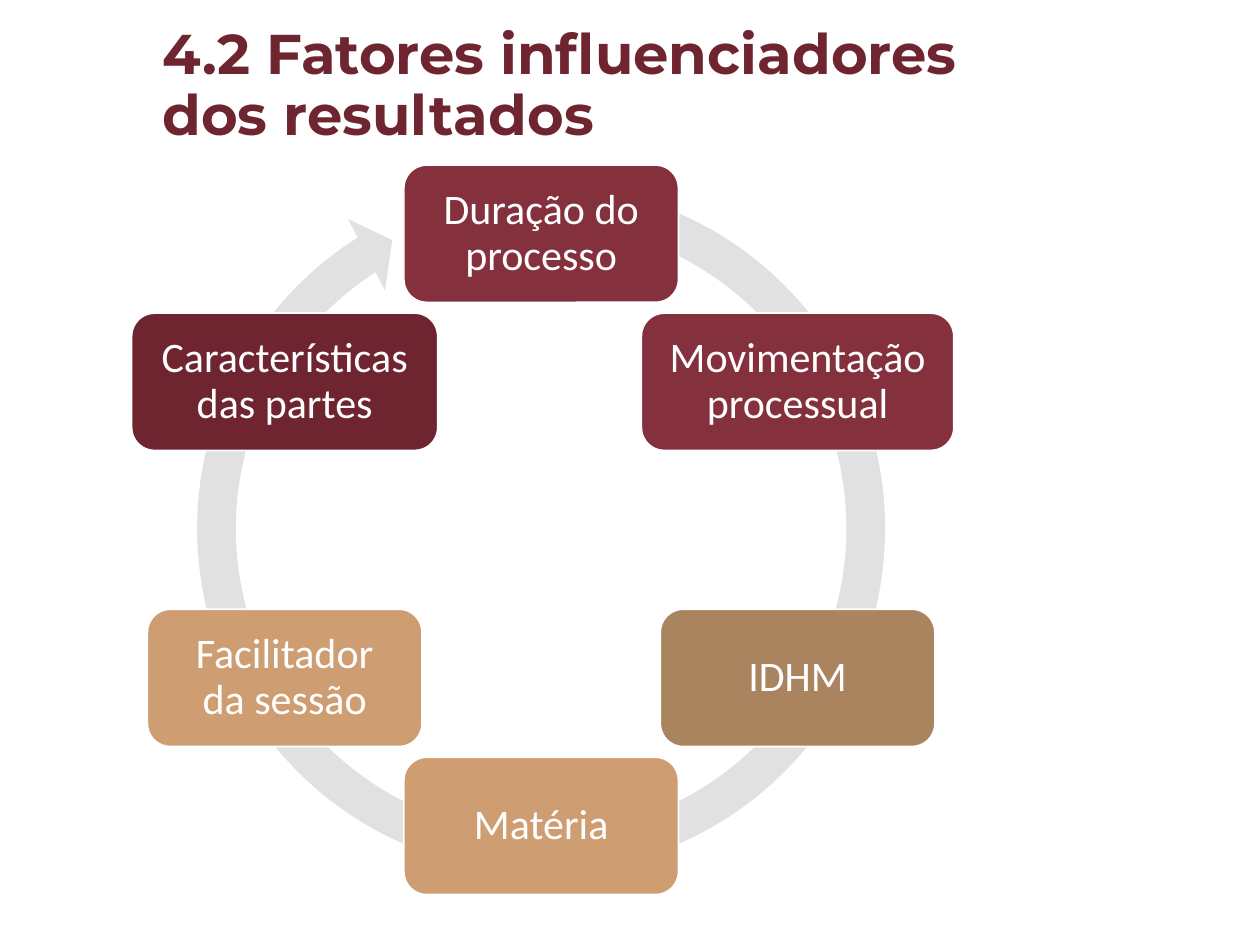
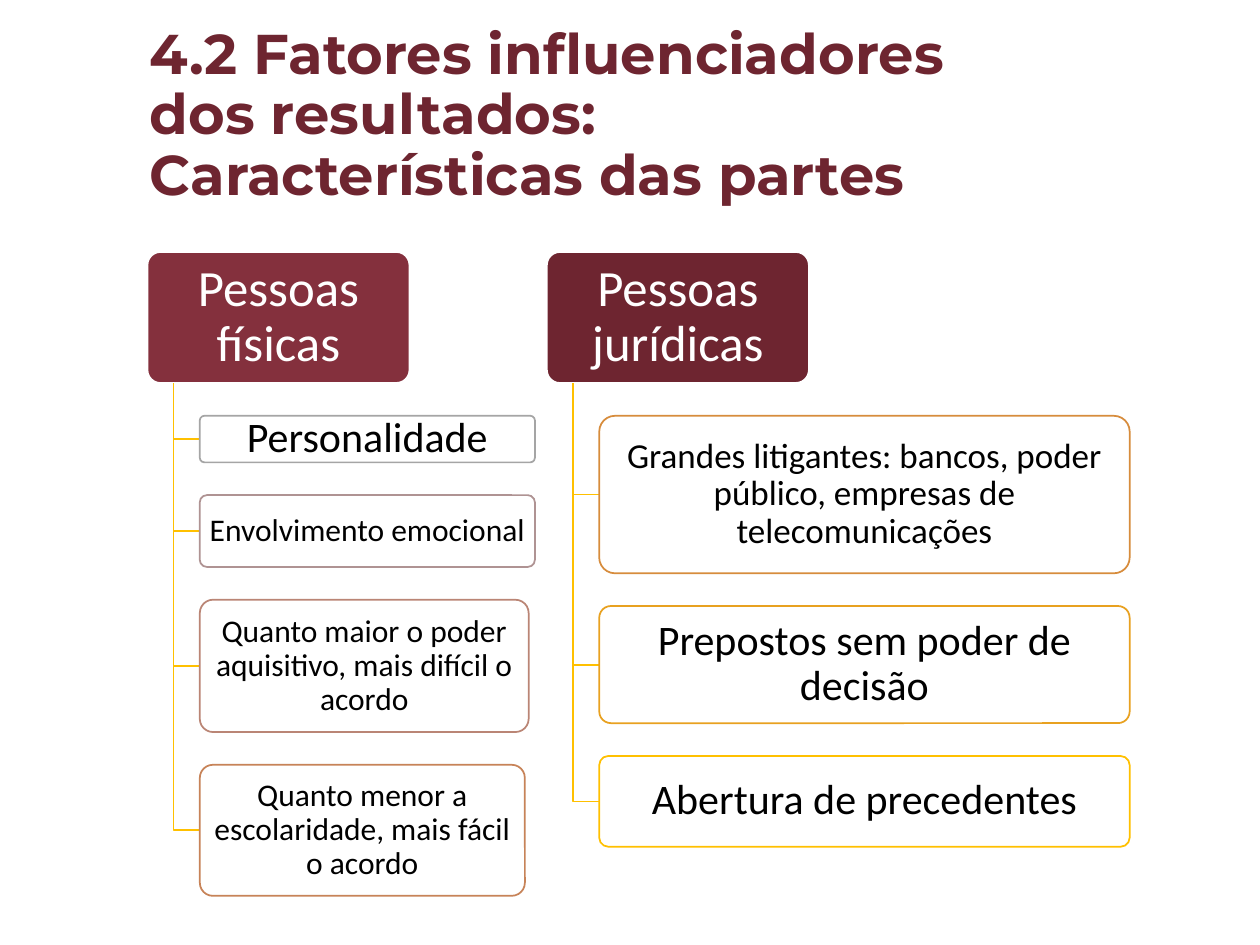
"""Build two slides on the factors that influence settlement results."""
import math

from pptx import Presentation
from pptx.dml.color import RGBColor
from pptx.enum import shapes, text
from pptx.util import Inches, Pt

WINE, DARK_WINE, BROWN, TAN = "84303D", "6E2530", "AA845F", "CE9D72"
WHITE, BLACK, RING_GREY, GOLD = "FFFFFF", "000000", "E1E1E1", "FFC000"

FACTORS = [
    ("Duração do processo", WINE, 2.18),
    ("Movimentação processual", WINE, 2.48),
    ("IDHM", BROWN, 2.18),
    ("Matéria", TAN, 2.18),
    ("Facilitador da sessão", TAN, 2.18),
    ("Características das partes", DARK_WINE, 2.43),
]
INDIVIDUALS = [
    ("Personalidade", 2.66, 0.37, 24, "A5A5A5"),
    ("Envolvimento emocional", 2.66, 0.57, 18, "AF9393"),
    ("Quanto maior o poder aquisitivo, mais difícil o acordo", 2.61, 1.05, 18, "BA8575"),
    ("Quanto menor a escolaridade, mais fácil o acordo", 2.58, 1.04, 18, "C78358"),
]
COMPANIES = [
    ("Grandes litigantes: bancos, poder público, empresas de telecomunicações",
     4.21, 1.25, 20, "D78C3C"),
    ("Prepostos sem poder de decisão", 4.21, 0.93, 24, "E8A120"),
    ("Abertura de precedentes", 4.21, 0.72, 24, "FFC000"),
]


def color(value):
    """Turn a hex string into a colour."""
    return RGBColor.from_string(value)


def write(frame, content, size, ink, font="Calibri", bold=False, align=None):
    """Write content into a text frame in one style."""
    frame.word_wrap = True
    frame.vertical_anchor = text.MSO_ANCHOR.MIDDLE
    frame.text = content
    for paragraph in frame.paragraphs:
        paragraph.line_spacing = 0.9
        paragraph.alignment = align
        for run in paragraph.runs:
            run.font.name, run.font.size, run.font.bold = font, Pt(size), bold
            run.font.color.rgb = color(ink)


def add_title(slide, content, left, top, height):
    """Add the slide title."""
    title = slide.shapes.add_textbox(Inches(left), Inches(top), Inches(8.62), Inches(height))
    write(title.text_frame, content, 32, DARK_WINE, "Montserrat", True, text.PP_ALIGN.LEFT)


def add_card(slide, content, box, fill, outline, size, ink, corner, inset):
    """Add a rounded card with centred text."""
    card = slide.shapes.add_shape(
        shapes.MSO_SHAPE.ROUNDED_RECTANGLE, *(Inches(length) for length in box))
    card.shadow.inherit = False
    card.adjustments[0] = corner
    card.fill.solid()
    card.fill.fore_color.rgb = color(fill)
    card.line.color.rgb = color(outline)
    card.line.width = Pt(1)
    frame = card.text_frame
    frame.margin_left = frame.margin_right = Inches(inset)
    frame.margin_top = frame.margin_bottom = Inches(0.04)
    write(frame, content, size, ink, align=text.PP_ALIGN.CENTER)


def add_cycle(slide, left, top, size):
    """Draw the factors around a circular arrow that fills a square box."""
    ring = slide.shapes.add_shape(
        shapes.MSO_SHAPE.CIRCULAR_ARROW, Inches(left), Inches(top), Inches(size), Inches(size))
    ring.shadow.inherit = False
    for index, value in enumerate((0.053, 3.126, 142.484, 171.152, 0.055)):
        ring.adjustments[index] = value
    ring.fill.solid()
    ring.fill.fore_color.rgb = color(RING_GREY)
    ring.line.fill.background()
    radius, height = 2.35, 1.09
    for index, (factor, fill, width) in enumerate(FACTORS):
        angle = math.tau * index / len(FACTORS)
        center_x = left + size / 2 + radius * math.sin(angle)
        center_y = top + size / 2 + 0.01 - radius * math.cos(angle)
        box = (center_x - width / 2, center_y - height / 2, width, height)
        add_card(slide, factor, box, fill, WHITE, 24, WHITE, 0.167, 0.15)


def add_branch(slide, trunk_x, start_y, end_x, end_y):
    """Draw an elbow line from a heading down to one trait."""
    builder = slide.shapes.build_freeform(Inches(trunk_x), Inches(start_y))
    builder.add_line_segments(
        [(Inches(trunk_x), Inches(end_y)), (Inches(end_x), Inches(end_y))], close=False)
    branch = builder.convert_to_shape()
    branch.shadow.inherit = False
    branch.fill.background()
    branch.line.color.rgb = color(GOLD)
    branch.line.width = Pt(1)


def add_party(slide, heading, fill, traits, left, top):
    """Add a party heading with its traits hanging below."""
    width, height, gap = 2.08, 1.04, 0.26
    add_card(slide, heading, (left, top, width, height), fill, WHITE, 29, WHITE, 0.1, 0.09)
    trunk_x, trait_x = left + width * 0.1, left + width * 0.2
    trait_y = top + height + gap
    for trait, trait_width, trait_height, size, outline in traits:
        add_branch(slide, trunk_x, top + height, trait_x, trait_y + trait_height / 2)
        box = (trait_x, trait_y, trait_width, trait_height)
        add_card(slide, trait, box, WHITE, outline, size, BLACK, 0.1, 0.06)
        trait_y += trait_height + gap


def add_factors_slide(deck):
    """Add the slide with the cycle of factors."""
    slide = deck.slides.add_slide(deck.slide_layouts[6])
    add_title(slide, "4.2 Fatores influenciadores\vdos resultados", 1.19, 0.09, 1.2)
    add_cycle(slide, 1.4, 1.3, 5.79)


def add_parties_slide(deck):
    """Add the slide with the traits of each kind of party."""
    slide = deck.slides.add_slide(deck.slide_layouts[6])
    add_party(slide, "Pessoas físicas", WINE, INDIVIDUALS, 1.17, 2)
    add_party(slide, "Pessoas jurídicas", DARK_WINE, COMPANIES, 4.34, 2)
    add_title(slide, "4.2 Fatores influenciadores\vdos resultados:\nCaracterísticas das partes",
              1.09, 0.23, 1.39)


def main():
    """Build and save the deck."""
    deck = Presentation()
    deck.slide_width, deck.slide_height = Inches(10), Inches(7.5)
    add_factors_slide(deck)
    add_parties_slide(deck)
    deck.save("out.pptx")


if __name__ == "__main__":
    main()
